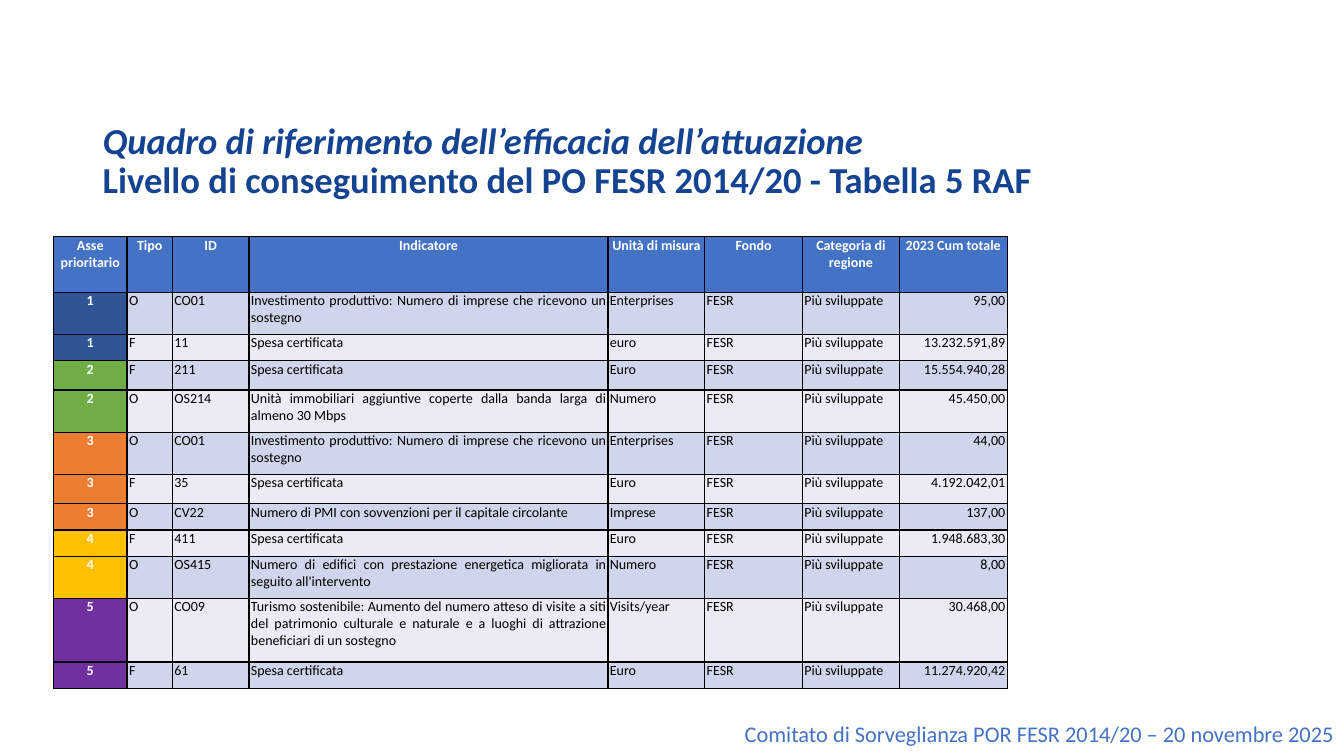
"""Build the slide with the FESR 2014/20 performance framework table."""
from typing import NamedTuple

from lxml.etree import SubElement
from pptx import Presentation
from pptx.dml.color import RGBColor
from pptx.enum.text import MSO_ANCHOR, MSO_AUTO_SIZE, PP_ALIGN
from pptx.oxml.ns import qn
from pptx.slide import Slide
from pptx.table import _Cell
from pptx.util import Inches, Pt

FONT_NAME = "Calibri"
NAVY = RGBColor(0x14, 0x43, 0x91)
BLUE = RGBColor(0x44, 0x72, 0xC4)
WHITE = RGBColor(0xFF, 0xFF, 0xFF)
BLACK = RGBColor(0x00, 0x00, 0x00)
BANDS = (RGBColor(0xCF, 0xD5, 0xEA), RGBColor(0xE9, 0xEB, 0xF5))
AXIS_COLOURS = {
    1: RGBColor(0x2F, 0x55, 0x97),
    2: RGBColor(0x70, 0xAD, 0x47),
    3: RGBColor(0xED, 0x7D, 0x31),
    4: RGBColor(0xFF, 0xC0, 0x00),
    5: RGBColor(0x70, 0x30, 0xA0),
}


class Indicator(NamedTuple):
    """One indicator row of the table."""

    axis: int
    kind: str
    code: str
    name: str
    unit: str
    total: str
    height: float


class Column(NamedTuple):
    """One table column."""

    header: str
    width: float
    alignment: PP_ALIGN


SPENDING = "Spesa certificata"
INVESTMENT = "Investimento produttivo: Numero di imprese che ricevono un sostegno"
BROADBAND = "Unità immobiliari aggiuntive coperte dalla banda larga di almeno 30 Mbps"
CAPITAL = "Numero di PMI con sovvenzioni per il capitale circolante"
BUILDINGS = ("Numero di edifici con prestazione energetica migliorata "
             "in seguito all'intervento")
TOURISM = ("Turismo sostenibile: Aumento del numero atteso di visite a siti del "
           "patrimonio culturale e naturale e a luoghi di attrazione beneficiari "
           "di un sostegno")
FUND = "FESR"
REGION = "Più sviluppate"
HEADER_HEIGHT = 0.55

COLUMNS = (
    Column("Asse prioritario", 0.73, PP_ALIGN.CENTER),
    Column("Tipo", 0.45, PP_ALIGN.JUSTIFY),
    Column("ID", 0.76, PP_ALIGN.JUSTIFY),
    Column("Indicatore", 3.56, PP_ALIGN.JUSTIFY),
    Column("Unità di misura", 0.96, PP_ALIGN.JUSTIFY),
    Column("Fondo", 0.97, PP_ALIGN.JUSTIFY),
    Column("Categoria di regione", 0.96, PP_ALIGN.JUSTIFY),
    Column("2023 Cum totale", 1.07, PP_ALIGN.RIGHT),
)
INDICATORS = (
    Indicator(1, "O", "CO01", INVESTMENT, "Enterprises", "95,00", 0.42),
    Indicator(1, "F", "11", SPENDING, "euro", "13.232.591,89", 0.26),
    Indicator(2, "F", "211", SPENDING, "Euro", "15.554.940,28", 0.29),
    Indicator(2, "O", "OS214", BROADBAND, "Numero", "45.450,00", 0.42),
    Indicator(3, "O", "CO01", INVESTMENT, "Enterprises", "44,00", 0.42),
    Indicator(3, "F", "35", SPENDING, "Euro", "4.192.042,01", 0.29),
    Indicator(3, "O", "CV22", CAPITAL, "Imprese", "137,00", 0.26),
    Indicator(4, "F", "411", SPENDING, "Euro", "1.948.683,30", 0.26),
    Indicator(4, "O", "OS415", BUILDINGS, "Numero", "8,00", 0.42),
    Indicator(5, "O", "CO09", TOURISM, "Visits/year", "30.468,00", 0.63),
    Indicator(5, "F", "61", SPENDING, "Euro", "11.274.920,42", 0.26),
)


def add_title(slide: Slide) -> None:
    """Add the two-line title, its first line in italics."""
    shape = slide.shapes.add_textbox(Inches(0.92), Inches(0.4), Inches(11.5), Inches(1.6))
    frame = shape.text_frame
    frame.word_wrap = True
    frame.vertical_anchor = MSO_ANCHOR.BOTTOM
    frame.margin_bottom = 0
    paragraph = frame.paragraphs[0]
    paragraph.line_spacing = 0.9
    paragraph.font.name = FONT_NAME
    paragraph.font.size = Pt(26.1)
    paragraph.font.bold = True
    paragraph.font.color.rgb = NAVY
    first_line = paragraph.add_run()
    first_line.text = "Quadro di riferimento dell’efficacia dell’attuazione"
    first_line.font.italic = True
    paragraph.add_line_break()
    second_line = paragraph.add_run()
    second_line.text = "Livello di conseguimento del PO FESR 2014/20 - Tabella 5 RAF"


def add_borders(cell: _Cell) -> None:
    """Draw a thin black line on all four sides of a cell."""
    properties = cell._tc.get_or_add_tcPr()
    for side in ("lnL", "lnR", "lnT", "lnB"):
        line = SubElement(properties, qn(f"a:{side}"), w=str(Pt(1)))
        fill = SubElement(line, qn("a:solidFill"))
        SubElement(fill, qn("a:srgbClr"), val=str(BLACK))


def fill_cell(cell: _Cell, text: str, alignment: PP_ALIGN, fill: RGBColor,
              emphasised: bool) -> None:
    """Write and format one table cell."""
    add_borders(cell)
    cell.fill.solid()
    cell.fill.fore_color.rgb = fill
    cell.margin_left = cell.margin_right = Inches(0.02)
    cell.margin_top = cell.margin_bottom = 0
    cell.text = text
    paragraph = cell.text_frame.paragraphs[0]
    paragraph.alignment = alignment
    paragraph.font.name = FONT_NAME
    paragraph.font.size = Pt(10)
    paragraph.font.bold = emphasised
    paragraph.font.color.rgb = WHITE if emphasised else BLACK


def add_indicator_table(slide: Slide) -> None:
    """Add the table of indicators by priority axis."""
    width = sum(column.width for column in COLUMNS)
    height = HEADER_HEIGHT + sum(indicator.height for indicator in INDICATORS)
    table = slide.shapes.add_table(
        len(INDICATORS) + 1, len(COLUMNS),
        Inches(0.53), Inches(2.35), Inches(width), Inches(height)).table
    table.horz_banding = False
    table.rows[0].height = Inches(HEADER_HEIGHT)
    for column_index, column in enumerate(COLUMNS):
        table.columns[column_index].width = Inches(column.width)
        fill_cell(table.cell(0, column_index), column.header, PP_ALIGN.CENTER, BLUE, True)
    for row_index, indicator in enumerate(INDICATORS, start=1):
        table.rows[row_index].height = Inches(indicator.height)
        values = (str(indicator.axis), indicator.kind, indicator.code, indicator.name,
                  indicator.unit, FUND, REGION, indicator.total)
        band = BANDS[(row_index - 1) % 2]
        for column_index, (column, value) in enumerate(zip(COLUMNS, values)):
            is_axis = column_index == 0
            fill = AXIS_COLOURS[indicator.axis] if is_axis else band
            fill_cell(table.cell(row_index, column_index), value, column.alignment,
                      fill, is_axis)


def add_footer(slide: Slide) -> None:
    """Add the right-aligned meeting line at the bottom."""
    shape = slide.shapes.add_textbox(Inches(5.79), Inches(7.1), Inches(7.54), Inches(0.37))
    frame = shape.text_frame
    frame.word_wrap = True
    frame.auto_size = MSO_AUTO_SIZE.SHAPE_TO_FIT_TEXT
    paragraph = frame.paragraphs[0]
    paragraph.text = "Comitato di Sorveglianza POR FESR 2014/20 – 20 novembre 2025"
    paragraph.alignment = PP_ALIGN.RIGHT
    paragraph.font.name = FONT_NAME
    paragraph.font.size = Pt(16)
    paragraph.font.color.rgb = BLUE


def main() -> None:
    """Create and save the presentation."""
    presentation = Presentation()
    presentation.slide_width = Inches(13.33)
    presentation.slide_height = Inches(7.5)
    slide = presentation.slides.add_slide(presentation.slide_layouts[6])
    add_title(slide)
    add_indicator_table(slide)
    add_footer(slide)
    presentation.save("out.pptx")


if __name__ == "__main__":
    main()
